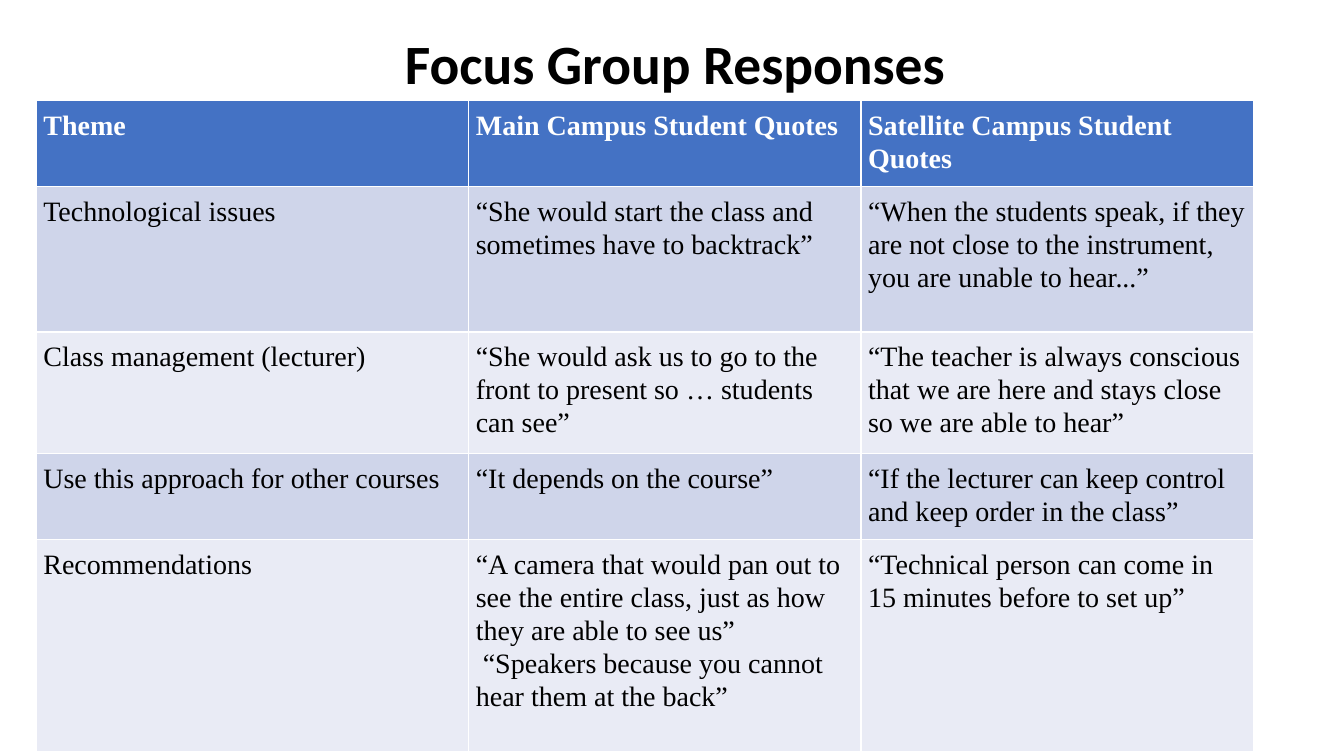
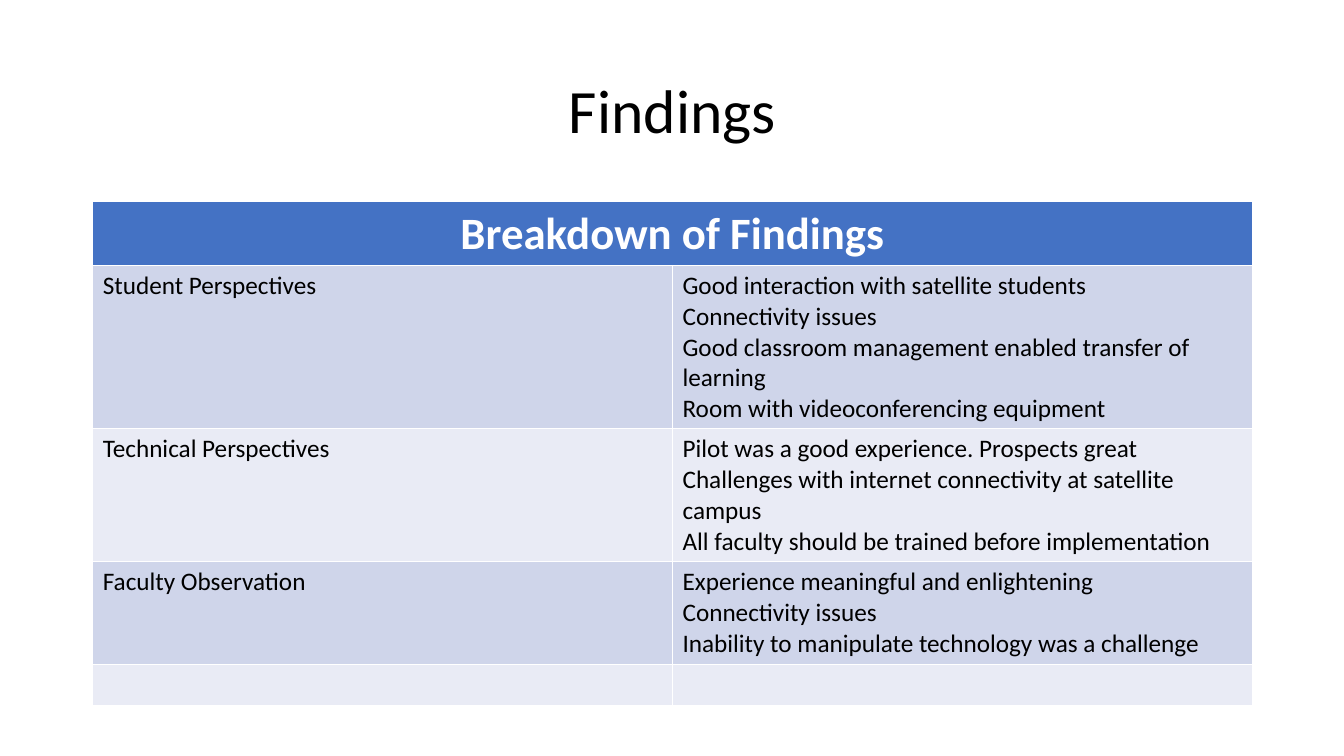
from dataclasses import dataclass

from pptx import Presentation
from pptx.dml.color import RGBColor as Rgb
from pptx.enum.text import MSO_ANCHOR as Anchor, PP_ALIGN as Align
from pptx.util import Inches, Pt

# Shared style
HEX = {"ink": "000000", "white": "FFFFFF", "head": "4472C4",
       "odd": "CFD5EA", "even": "E9EBF5"}
SANS, SERIF = "Calibri", "Times New Roman"


@dataclass
class Title:
    text: str
    box: tuple[float, float, float, float]
    size: float
    bold: bool = False


@dataclass
class Grid:
    left: float
    top: float
    cols: list[float]
    rows: list[float]
    cells: list[list[str]]
    font: str
    size: float
    head: float
    pad: tuple[float, float] = (0.1, 0.05)
    space: float = 1.0
    span: bool = False


def style(para, font: str, size: float, ink: str, bold: bool) -> None:
    para.font.name, para.font.size, para.font.bold = font, Pt(size), bold
    para.font.color.rgb = Rgb.from_string(HEX[ink])


def add_title(slide, title: Title) -> None:
    frame = slide.shapes.add_textbox(*map(Inches, title.box)).text_frame
    frame.word_wrap = True
    frame.vertical_anchor = Anchor.MIDDLE
    frame.text = title.text
    para = frame.paragraphs[0]
    para.alignment, para.line_spacing = Align.CENTER, 0.9
    style(para, SANS, title.size, "ink", title.bold)


def fill_cell(cell, text: str, row: int, grid: Grid) -> None:
    head = row == 0
    tone = "head" if head else "odd" if row % 2 else "even"
    cell.fill.solid()
    cell.fill.fore_color.rgb = Rgb.from_string(HEX[tone])
    cell.margin_left = cell.margin_right = Inches(grid.pad[0])
    cell.margin_top = cell.margin_bottom = Inches(grid.pad[1])
    cell.text = text
    for para in cell.text_frame.paragraphs:
        para.line_spacing = grid.space
        if head and grid.span:
            para.alignment = Align.CENTER
        style(para, grid.font, grid.head if head else grid.size,
              "white" if head else "ink", head)


def add_grid(slide, grid: Grid) -> None:
    box = (grid.left, grid.top, sum(grid.cols), sum(grid.rows))
    table = slide.shapes.add_table(len(grid.rows), len(grid.cols),
                                   *map(Inches, box)).table
    for col, width in zip(table.columns, grid.cols):
        col.width = Inches(width)
    for row, height in zip(table.rows, grid.rows):
        row.height = Inches(height)
    if grid.span:
        table.cell(0, 0).merge(table.cell(0, len(grid.cols) - 1))
    for r, texts in enumerate(grid.cells):
        for c, text in enumerate(texts):
            fill_cell(table.cell(r, c), text, r, grid)


# Slide content
QUOTES = Grid(
    0.36, 1, [4.29, 3.89, 3.89], [0.81, 1.44, 1.15, 0.81, 2.1],
    [["Theme", "Main Campus Student Quotes",
      "Satellite Campus Student Quotes"],
     ["Technological issues",
      "“She would start the class and sometimes have to backtrack”",
      "“When the students speak, if they are not close to the instrument, "
      "you are unable to hear...”"],
     ["Class management (lecturer)",
      "“She would ask us to go to the front to present so … students "
      "can see”",
      "“The teacher is always conscious that we are here and stays close "
      "so we are able to hear”"],
     ["Use this approach for other courses",
      "“It depends on the course”",
      "“If the lecturer can keep control and keep order in the class”"],
     ["Recommendations",
      "“A camera that would pan out to see the entire class, just as how "
      "they are able to see us”\n"
      " “Speakers because you cannot hear them at the back”",
      "“Technical person can come in 15 minutes before to set up”"]],
    SERIF, 20, 20, pad=(0.07, 0.07), space=1.07)

FINDINGS = Grid(
    0.92, 2, [5.75, 5.75], [0.63, 1.62, 1.32, 1.02, 0.41],
    [["Breakdown of Findings"],
     ["Student Perspectives",
      "Good interaction with satellite students\n"
      "Connectivity issues\n"
      "Good classroom management enabled transfer of learning\n"
      "Room with videoconferencing equipment"],
     ["Technical Perspectives",
      "Pilot was a good experience. Prospects great\n"
      "Challenges with internet connectivity at satellite campus\n"
      "All faculty should be trained before implementation"],
     ["Faculty Observation",
      "Experience meaningful and enlightening\n"
      "Connectivity issues\n"
      "Inability to manipulate technology was a challenge"],
     ["", ""]],
    SANS, 18, 32, span=True)

PAGES = [
    (Title("Focus Group Responses", (0.97, 0.4, 11.45, 0.51), 39.6, True),
     QUOTES),
    (Title("Findings", (0.92, 0.4, 11.5, 1.45), 44), FINDINGS),
]


def main() -> None:
    deck = Presentation()
    deck.slide_width, deck.slide_height = Inches(13.33), Inches(7.5)
    for title, grid in PAGES:
        slide = deck.slides.add_slide(deck.slide_layouts[6])
        add_title(slide, title)
        add_grid(slide, grid)
    deck.save("out.pptx")


if __name__ == "__main__":
    main()
